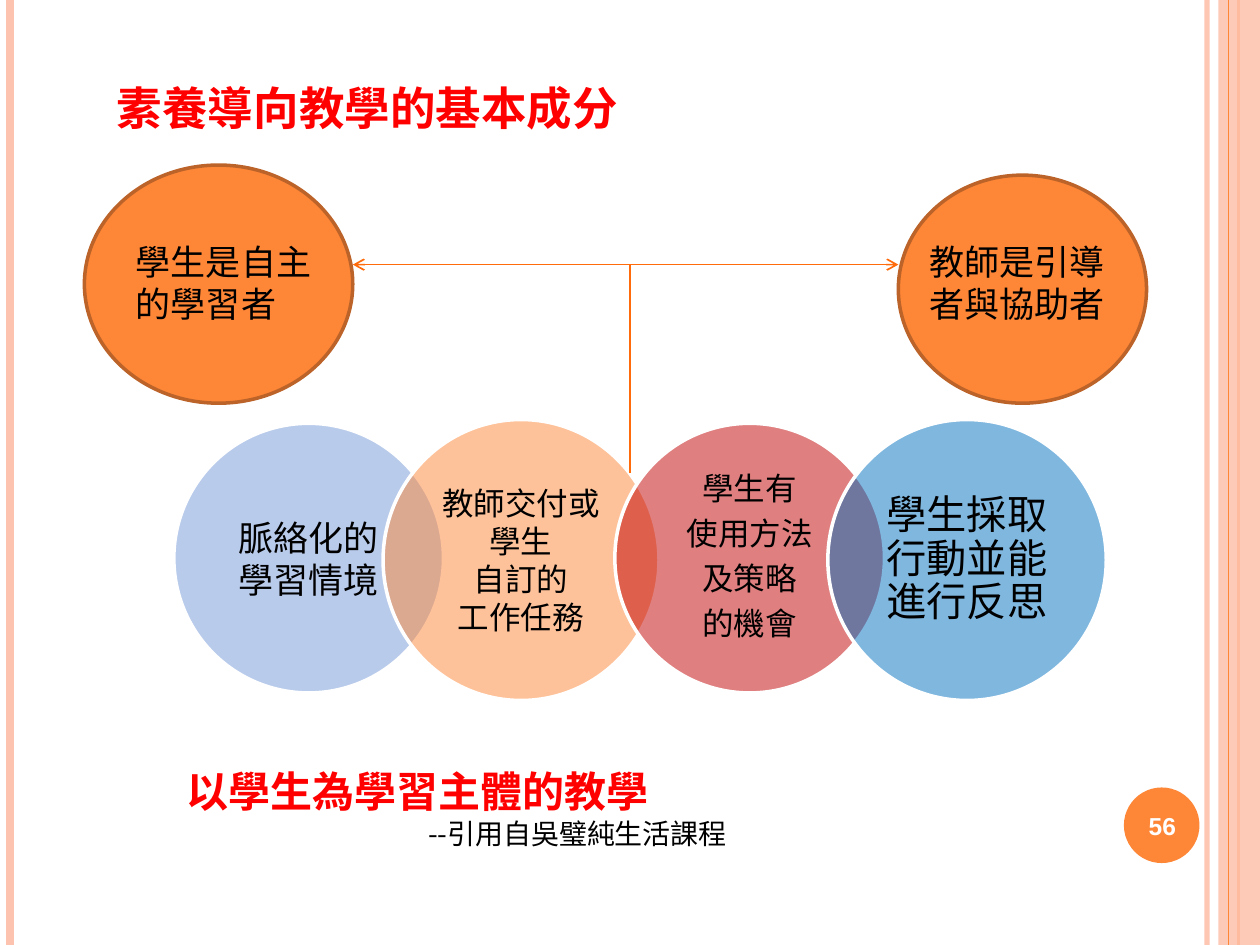
from dataclasses import dataclass

from lxml import etree
from pptx import Presentation
from pptx.dml.color import RGBColor
from pptx.enum import shapes, text
from pptx.oxml.ns import qn
from pptx.util import Inches, Pt

CJK = "Noto Sans CJK SC"
ORANGE, PINK, RED, BLACK, WHITE = "FE8637", "FEC3AE", "FF0000", "000000", "FFFFFF"


@dataclass
class Area:
    left: float
    top: float
    width: float
    height: float

    def lengths(self):
        return [Inches(n) for n in (self.left, self.top, self.width, self.height)]

    def inset(self, share: float):
        dx, dy = self.width * share, self.height * share
        return Area(self.left + dx, self.top + dy, self.width - 2 * dx, self.height - 2 * dy)


@dataclass
class Style:
    size: float
    color: str = BLACK
    bold: bool = False
    font: str = CJK
    align: text.PP_ALIGN = text.PP_ALIGN.LEFT
    anchor: text.MSO_ANCHOR = text.MSO_ANCHOR.TOP
    margins: tuple = (0.1, 0.05)
    line_spacing: float = 1.0
    space_after: float = 0
    indent: float = 0


@dataclass
class Ring:
    area: Area
    color: str
    lines: list
    size: float
    line_spacing: float = 1.0
    space_after: float = 0


@dataclass
class Role:
    circle: Area
    label: Area
    words: str


@dataclass
class Rule:
    x: float
    color: str
    weight: float
    opacity: int = 100


RULES = [Rule(9.58, PINK, 3, 93), Rule(0.08, PINK, 4.5), Rule(9.83, ORANGE, 1.5)]
INNER_RULE = Rule(9.75, ORANGE, 0.75)
ROLES = [
    Role(Area(0.67, 1.31, 2.13, 1.89), Area(0.98, 1.86, 1.65, 0.77), "學生是自主的學習者"),
    Role(Area(7.13, 1.39, 1.97, 1.81), Area(7.28, 1.86, 1.65, 0.77), "教師是引導者與協助者"),
]
RINGS = [
    Ring(Area(1.38, 3.36, 2.14, 2.14), "7598D9", ["脈絡化的學習情境"], 20),
    Ring(Area(3.04, 3.33, 2.19, 2.23), ORANGE, ["教師交付或學生", "自訂的", "工作任務"], 18),
    Ring(Area(4.88, 3.36, 2.14, 2.14), "C00000",
         ["學生有", "使用方法", "及策略", "的機會"], 18, 0.9, 6.3),
    Ring(Area(6.57, 3.33, 2.21, 2.23), "0070C0", ["學生採取行動並能進行反思"], 23, 0.9, 8),
]


def paint(target, color: str):
    target.rgb = RGBColor.from_string(color)


def fade(shape, opacity: int):
    if opacity < 100:
        color = next(shape.element.spPr.iter(qn("a:srgbClr")))
        etree.SubElement(color, qn("a:alpha"), val=str(opacity * 1000))


def add_figure(page, kind, area: Area, fill: str, outline: str = "", opacity: int = 100):
    shape = page.shapes.add_shape(kind, *area.lengths())
    shape.shadow.inherit = False
    shape.fill.solid()
    paint(shape.fill.fore_color, fill)
    if outline:
        paint(shape.line.color, outline)
        shape.line.width = Pt(2)
    else:
        shape.line.fill.background()
    fade(shape, opacity)


def add_line(page, start: tuple, end: tuple, color: str, weight: float,
             opacity: int = 100, arrows: bool = False):
    ends = [Inches(n) for n in (*start, *end)]
    line = page.shapes.add_connector(shapes.MSO_CONNECTOR.STRAIGHT, *ends)
    paint(line.line.color, color)
    line.line.width = Pt(weight)
    fade(line, opacity)
    if arrows:
        for tag in ("a:headEnd", "a:tailEnd"):
            etree.SubElement(line.element.spPr.find(qn("a:ln")), qn(tag), type="arrow")
    etree.SubElement(line.element.spPr, qn("a:effectLst"))


def add_rule(page, rule: Rule):
    add_line(page, (rule.x, 0), (rule.x, 7.5), rule.color, rule.weight, rule.opacity)


def add_para(para, words: str, style: Style):
    para.alignment = style.align
    para.line_spacing = style.line_spacing
    para.space_after = Pt(style.space_after)
    if style.indent:
        para._p.get_or_add_pPr().set("marL", str(Inches(style.indent)))
    span = para.add_run()
    span.text = words
    span.font.name = style.font
    span.font.size = Pt(style.size)
    span.font.bold = style.bold
    paint(span.font.color, style.color)
    etree.SubElement(span.font._element, qn("a:ea"), typeface=style.font)


def add_words(page, area: Area, lines: list, style: Style):
    frame = page.shapes.add_textbox(*area.lengths()).text_frame
    frame.word_wrap = True
    frame.vertical_anchor = style.anchor
    frame.margin_left = frame.margin_right = Inches(style.margins[0])
    frame.margin_top = frame.margin_bottom = Inches(style.margins[1])
    for index, words in enumerate(lines):
        para = frame.add_paragraph() if index else frame.paragraphs[0]
        add_para(para, words, style)
    return frame


def add_ring(page, ring: Ring):
    add_figure(page, shapes.MSO_SHAPE.OVAL, ring.area, ring.color, WHITE, 50)
    style = Style(ring.size, align=text.PP_ALIGN.CENTER, anchor=text.MSO_ANCHOR.MIDDLE,
                  margins=(0.12, 0.03), line_spacing=ring.line_spacing,
                  space_after=ring.space_after)
    add_words(page, ring.area.inset(0.146), ring.lines, style)


def main():
    deck = Presentation()
    deck.slide_width, deck.slide_height = Inches(10), Inches(7.5)
    page = deck.slides.add_slide(deck.slide_layouts[6])

    for rule in RULES:
        add_rule(page, rule)
    add_figure(page, shapes.MSO_SHAPE.RECTANGLE, Area(9.67, 0, 0.33, 7.5), PINK, opacity=87)
    add_rule(page, INNER_RULE)
    add_figure(page, shapes.MSO_SHAPE.OVAL, Area(8.92, 6.25, 0.6, 0.6), ORANGE)
    add_words(page, Area(8.89, 6.27, 0.67, 0.57), ["56"],
              Style(14, WHITE, True, "Arial", text.PP_ALIGN.CENTER, text.MSO_ANCHOR.MIDDLE))
    add_words(page, Area(0.83, 0.5, 7.92, 0.7), ["素養導向教學的基本成分"],
              Style(26, RED, True, anchor=text.MSO_ANCHOR.MIDDLE))

    for role in ROLES:
        add_figure(page, shapes.MSO_SHAPE.OVAL, role.circle, ORANGE, "BC6329")
    for ring in RINGS:
        add_ring(page, ring)
    for role in ROLES:
        add_words(page, role.label, [role.words], Style(20))

    closing = add_words(page, Area(1.38, 6.03, 6.93, 0.81), ["以學生為學習主體的教學"],
                        Style(24, RED, True))
    add_para(closing.add_paragraph(), "--引用自吳璧純生活課程", Style(16, indent=1.92))

    add_line(page, (2.8, 2.1), (7.13, 2.1), "FF6B0A", 1, arrows=True)
    add_line(page, (5, 2.1), (5, 3.75), "FF6B0A", 1)
    deck.save("out.pptx")


if __name__ == "__main__":
    main()
